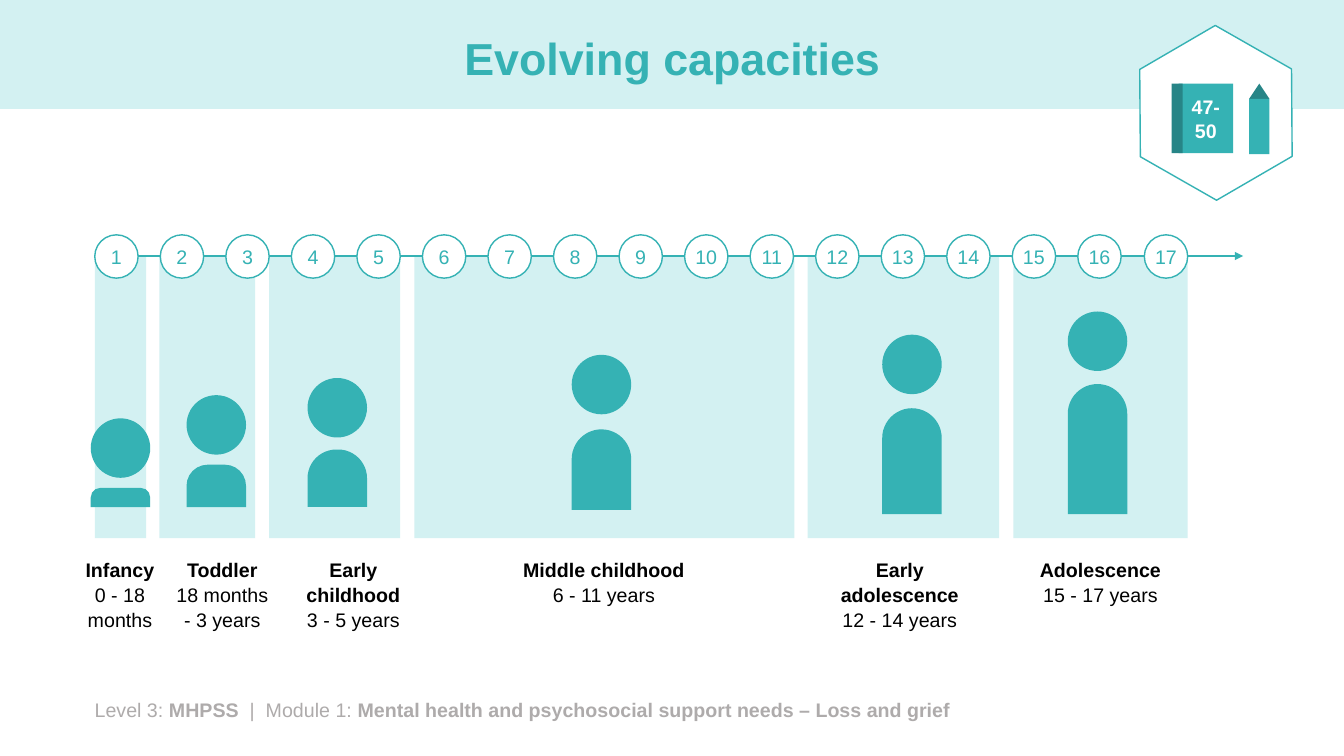
from lxml.etree import SubElement
from pptx import Presentation
from pptx.dml.color import RGBColor
from pptx.enum.shapes import MSO_CONNECTOR, MSO_SHAPE
from pptx.enum.text import MSO_ANCHOR, PP_ALIGN
from pptx.oxml.ns import qn
from pptx.util import Pt

PX = 9144  # EMU in one px, 100 px to the inch
TEAL, DARK_TEAL, PALE_TEAL = "35B2B4", "278587", "D3F1F2"
WHITE, BLACK, GREY = "FFFFFF", "000000", "AEABAB"
HEAD = 59  # diameter of a person's head

# name, age, band (left, width), label (left, width),
# person (left, top of head, top of body, bottom of body)
STAGES = [
    ("Infancy", "0 - 18 months", (94, 51), (62, 114), (90, 415, 484, 503)),
    ("Toddler", "18 months - 3 years", (158, 95), (162, 117), (185, 392, 461, 503)),
    ("Early childhood", "3 - 5 years", (267, 130), (291, 119), (305, 375, 446, 503)),
    ("Middle childhood", "6 - 11 years", (411, 377), (499, 200), (567, 352, 426, 506)),
    ("Early adolescence", "12 - 14 years", (801, 190), (801, 183), (875, 332, 405, 510)),
    ("Adolescence", "15 - 17 years", (1005, 173), (1005, 173), (1059, 309, 381, 510)),
]


def color(hex_code):
    return RGBColor.from_string(hex_code)


def emu(*lengths):
    return [length * PX for length in lengths]


def add_shape(slide, kind, box, fill, line=None):
    shape = slide.shapes.add_shape(kind, *emu(*box))
    shape.shadow.inherit = False
    shape.fill.solid()
    shape.fill.fore_color.rgb = color(fill)
    if line:
        shape.line.color.rgb = color(line)
        shape.line.width = Pt(1)
    else:
        shape.line.fill.background()
    return shape


def add_text_box(slide, box):
    frame = slide.shapes.add_textbox(*emu(*box)).text_frame
    frame.word_wrap = True
    return frame


def format_run(run, hex_code, size=14, bold=False):
    run.font.name = "Arial"
    run.font.size = Pt(size)
    run.font.bold = bold
    run.font.color.rgb = color(hex_code)


def set_centred_text(frame, text, hex_code, size=14, bold=False, spacing=1.0):
    frame.text = text
    for paragraph in frame.paragraphs:
        paragraph.alignment = PP_ALIGN.CENTER
        paragraph.line_spacing = spacing
        for run in paragraph.runs:
            format_run(run, hex_code, size, bold)


def draw_header(slide, box):
    left, top, width, height = box
    band = add_shape(slide, MSO_SHAPE.RECTANGLE, box, PALE_TEAL)
    title = slide.shapes.title
    title.element.addprevious(band.element)
    title.left, title.top, title.width, title.height = emu(
        left + 92, top + 13, width - 183, height - 13)
    title.text_frame.vertical_anchor = MSO_ANCHOR.MIDDLE
    set_centred_text(title.text_frame, "Evolving capacities", TEAL, 32, True, 0.9)


def draw_footer(slide, box):
    paragraph = add_text_box(slide, box).paragraphs[0]
    parts = [
        ("Level 3: ", False),
        ("MHPSS", True),
        ("  |  Module 1: ", False),
        ("Mental health and psychosocial support needs – Loss and grief", True),
    ]
    for text, bold in parts:
        run = paragraph.add_run()
        run.text = text
        format_run(run, GREY, bold=bold)


def draw_person(slide, left, head_top, body_top, bottom):
    add_shape(slide, MSO_SHAPE.OVAL, (left, head_top, HEAD, HEAD), TEAL)
    body = add_shape(slide, MSO_SHAPE.ROUND_2_SAME_RECTANGLE,
                     (left, body_top, HEAD, bottom - body_top), TEAL)
    body.adjustments[0] = 0.5
    body.adjustments[1] = 0


def draw_stage(slide, stage, top, height):
    name, age, (left, width), (label_left, label_width), person = stage
    add_shape(slide, MSO_SHAPE.RECTANGLE, (left, top, width, height), PALE_TEAL)
    draw_person(slide, *person)
    label = add_text_box(slide, (label_left, top + height + 13, label_width, 84))
    set_centred_text(label, f"{name}\n{age}", BLACK, spacing=1.07)
    label.paragraphs[0].runs[0].font.bold = True


def draw_timeline(slide, box, years=17, diameter=43):
    left, top, width, arrow_end = box
    # Arrow behind the years
    middle = top + diameter // 2
    arrow = slide.shapes.add_connector(
        MSO_CONNECTOR.STRAIGHT, *emu(left + diameter - 1, middle, arrow_end, middle))
    arrow.line.color.rgb = color(TEAL)
    arrow.line.width = Pt(1)
    SubElement(arrow.line._get_or_add_ln(), qn("a:tailEnd"), type="triangle")
    SubElement(arrow.element.spPr, qn("a:effectLst"))
    # Evenly spaced years
    for index in range(years):
        year_left = left + (width - diameter) * index // (years - 1)
        circle = add_shape(slide, MSO_SHAPE.OVAL,
                           (year_left, top, diameter, diameter), WHITE, TEAL)
        frame = circle.text_frame
        frame.margin_left = frame.margin_right = 0
        frame.margin_top = frame.margin_bottom = 0
        frame.vertical_anchor = MSO_ANCHOR.MIDDLE
        set_centred_text(frame, str(index + 1), TEAL)


def draw_badge(slide, box):
    left, top, width, height = box
    hexagon = add_shape(slide, MSO_SHAPE.HEXAGON, box, WHITE, TEAL)
    hexagon.adjustments[0] = 0.29
    hexagon.rotation = 29.7
    # Workbook with page numbers
    item_top = top + 46
    book = add_shape(slide, MSO_SHAPE.RECTANGLE, (left + 50, item_top, 54, 69), TEAL)
    book.text_frame.vertical_anchor = MSO_ANCHOR.MIDDLE
    set_centred_text(book.text_frame, "47-\n50", WHITE, bold=True)
    add_shape(slide, MSO_SHAPE.RECTANGLE, (left + 43, item_top, 11, 69), DARK_TEAL)
    # Pencil
    add_shape(slide, MSO_SHAPE.ISOSCELES_TRIANGLE,
              (left + 120, item_top, 20, 15), DARK_TEAL)
    add_shape(slide, MSO_SHAPE.RECTANGLE, (left + 120, item_top + 15, 20, 55), TEAL)


def main():
    presentation = Presentation()
    presentation.slide_width, presentation.slide_height = emu(1333, 750)
    slide = presentation.slides.add_slide(presentation.slide_layouts[5])
    draw_header(slide, (0, 0, 1333, 108))
    draw_footer(slide, (84, 687, 1135, 34))
    for stage in STAGES:
        draw_stage(slide, stage, top=253, height=281)
    draw_timeline(slide, (94, 233, 1084, 1233))
    draw_badge(slide, (1119, 37, 174, 150))
    presentation.save("out.pptx")


if __name__ == "__main__":
    main()
